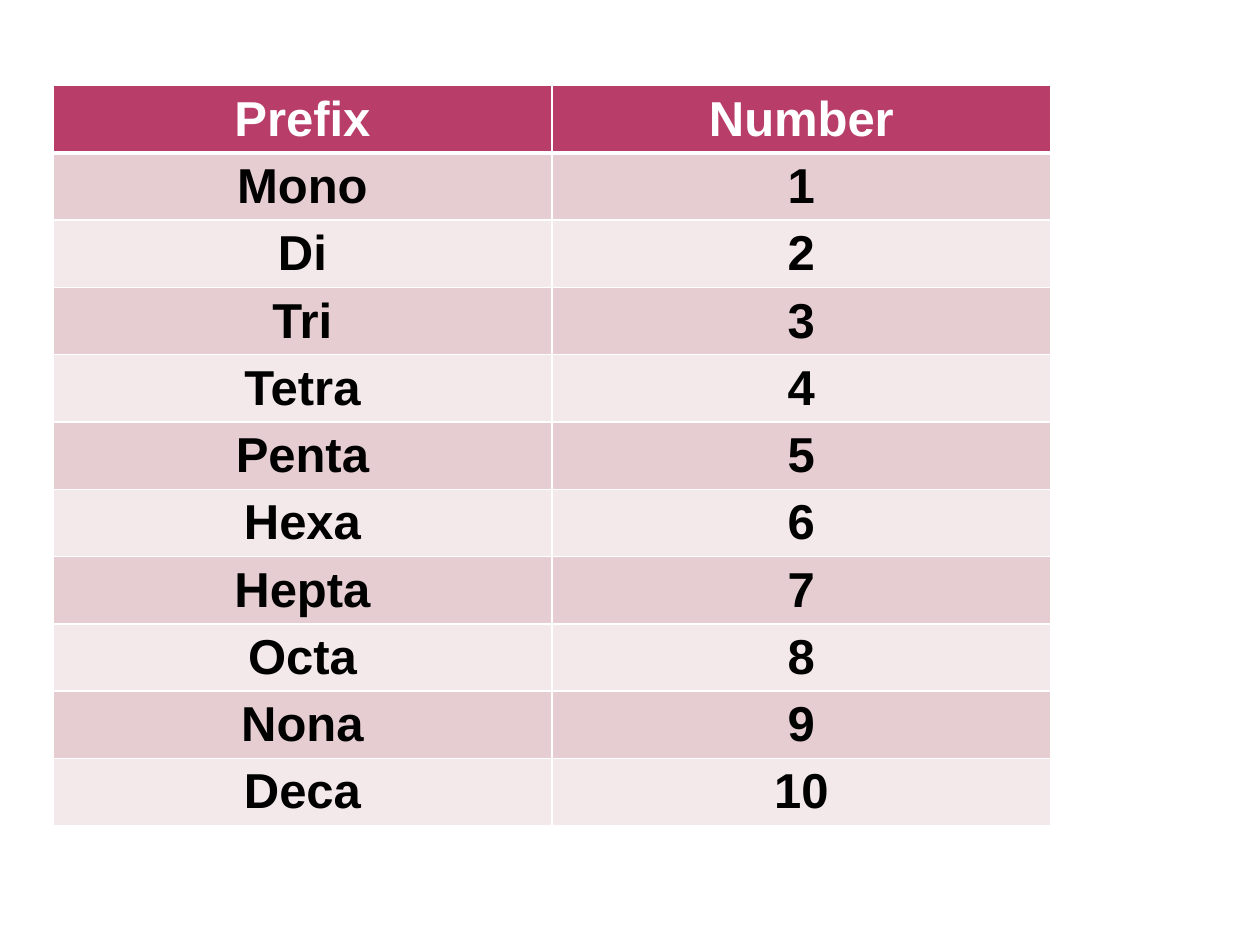
from lxml.etree import SubElement
from pptx import Presentation
from pptx.dml.color import RGBColor
from pptx.enum.text import PP_ALIGN
from pptx.oxml.ns import qn
from pptx.util import Inches, Pt

WHITE = RGBColor(0xFF, 0xFF, 0xFF)
BLACK = RGBColor(0x00, 0x00, 0x00)
RASPBERRY = RGBColor(0xB8, 0x3D, 0x68)
ROSE = RGBColor(0xE6, 0xCD, 0xD2)
PALE_ROSE = RGBColor(0xF3, 0xE8, 0xEA)

PREFIXES = ["Mono", "Di", "Tri", "Tetra", "Penta",
            "Hexa", "Hepta", "Octa", "Nona", "Deca"]


def write_text(text_frame, text, *, font, size, color, bold=False,
               alignment=PP_ALIGN.LEFT):
    paragraph = text_frame.paragraphs[0]
    paragraph.alignment = alignment
    run = paragraph.add_run()
    run.text = text
    run.font.name = font
    run.font.size = Pt(size)
    run.font.bold = bold
    run.font.color.rgb = color


def set_borders(cell, color, **widths):
    """Draw cell borders; widths are points keyed by side, in L, R, T, B order."""
    properties = cell._tc.get_or_add_tcPr()
    for side, width in widths.items():
        line = SubElement(properties, qn(f"a:ln{side}"), w=str(Pt(width)))
        fill = SubElement(line, qn("a:solidFill"))
        SubElement(fill, qn("a:srgbClr"), val=str(color))


class SlideBuilder:
    """Holds the text style and the slide being built."""

    font = "Arial"
    text_size = 28

    def __init__(self, slide):
        self.slide = slide

    def add_banded_table(self, rows, left, top, column_width, row_height):
        column_count = len(rows[0])
        shape = self.slide.shapes.add_table(
            len(rows), column_count, Inches(left), Inches(top),
            Inches(column_width * column_count), Inches(row_height * len(rows)))
        table = shape.table
        for column in table.columns:
            column.width = Inches(column_width)
        for row_index, values in enumerate(rows):
            table.rows[row_index].height = Inches(row_height)
            for column_index, value in enumerate(values):
                self.format_cell(table.cell(row_index, column_index),
                                 value, row_index)

    def format_cell(self, cell, value, row_index):
        is_header = row_index == 0
        set_borders(cell, WHITE, L=1, R=1,
                    T=3 if row_index == 1 else 1, B=3 if is_header else 1)
        cell.fill.solid()
        band = ROSE if row_index % 2 else PALE_ROSE
        cell.fill.fore_color.rgb = RASPBERRY if is_header else band
        write_text(cell.text_frame, value, font=self.font, size=self.text_size,
                   color=WHITE if is_header else BLACK, bold=True,
                   alignment=PP_ALIGN.CENTER)


def main():
    presentation = Presentation()
    presentation.slide_width = Inches(10)
    presentation.slide_height = Inches(7.5)
    slide = presentation.slides.add_slide(presentation.slide_layouts[6])
    numbered = [(prefix, str(number))
                for number, prefix in enumerate(PREFIXES, start=1)]
    SlideBuilder(slide).add_banded_table(
        [("Prefix", "Number"), *numbered],
        left=0.42, top=0.68, column_width=3.96, row_height=0.53)
    presentation.save("out.pptx")


if __name__ == "__main__":
    main()
